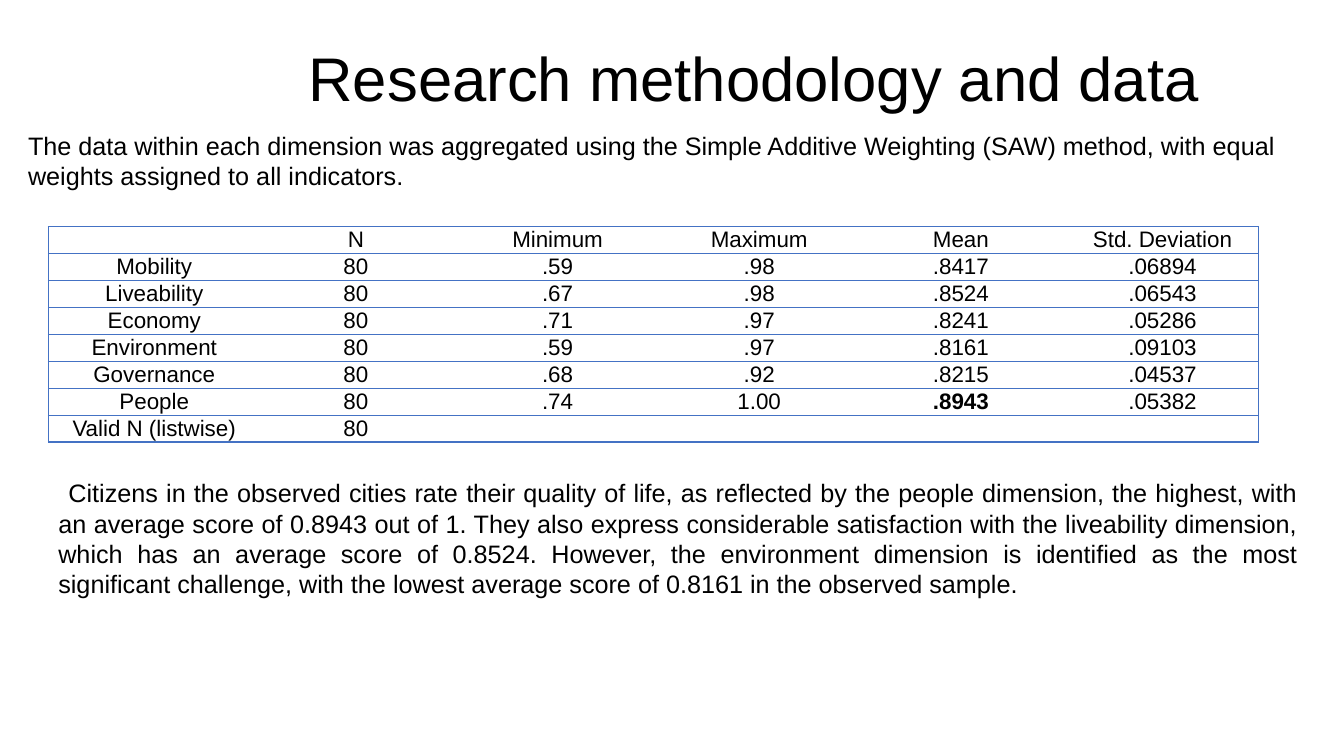
import pptx
import pptx.dml.color
import pptx.enum.text
import pptx.oxml.ns
import pptx.util
from lxml import etree

PX = 9144
FONT = "Arial"
BLACK = "000000"
WHITE = "FFFFFF"
RULE_BLUE = "4472C4"
ALIGN = pptx.enum.text.PP_ALIGN
ANCHOR = pptx.enum.text.MSO_ANCHOR
AUTO_SIZE = pptx.enum.text.MSO_AUTO_SIZE
qn = pptx.oxml.ns.qn

TITLE = "Research methodology and data"
METHOD = (
    "The data within each dimension was aggregated using the Simple Additive "
    "Weighting (SAW) method, with equal weights assigned to all indicators."
)
FINDINGS = (
    "Citizens in the observed cities rate their quality of life, as reflected by "
    "the people dimension, the highest, with an average score of 0.8943 out of 1. "
    "They also express considerable satisfaction with the liveability dimension, "
    "which has an average score of 0.8524. However, the environment dimension is "
    "identified as the most significant challenge, with the lowest average score "
    "of 0.8161 in the observed sample."
)
STATISTICS = [
    ("", "N", "Minimum", "Maximum", "Mean", "Std. Deviation"),
    ("Mobility", "80", ".59", ".98", ".8417", ".06894"),
    ("Liveability", "80", ".67", ".98", ".8524", ".06543"),
    ("Economy", "80", ".71", ".97", ".8241", ".05286"),
    ("Environment", "80", ".59", ".97", ".8161", ".09103"),
    ("Governance", "80", ".68", ".92", ".8215", ".04537"),
    ("People", "80", ".74", "1.00", ".8943", ".05382"),
    ("Valid N (listwise)", "80", "", "", "", ""),
]
HIGHEST_MEAN = ".8943"


def px(length):
    return pptx.util.Emu(length * PX)


def color(hex_string):
    return pptx.dml.color.RGBColor.from_string(hex_string)


def write_text(frame, text, size=18, bold=False, align=ALIGN.LEFT, indent=0, spacing=None):
    paragraph = frame.paragraphs[0]
    paragraph.alignment = align
    paragraph.line_spacing = spacing
    if indent:
        properties = paragraph._p.get_or_add_pPr()
        properties.set("marL", "0")
        properties.set("indent", str(px(indent)))
    if not text:
        etree.SubElement(paragraph._p, qn("a:endParaRPr"), sz=str(size * 100))
        return
    run = paragraph.add_run()
    run.text = text
    run.font.name = FONT
    run.font.size = pptx.util.Pt(size)
    run.font.bold = bold
    run.font.color.rgb = color(BLACK)


def set_margins(target, side, vertical):
    target.margin_left = target.margin_right = px(side)
    target.margin_top = target.margin_bottom = px(vertical)


def place_title(title, left, top, width, height):
    title.left, title.top, title.width, title.height = map(px, (left, top, width, height))
    frame = title.text_frame
    frame.word_wrap = True
    frame.auto_size = AUTO_SIZE.NONE
    frame.vertical_anchor = ANCHOR.MIDDLE
    set_margins(frame, 0, 0)
    write_text(frame, TITLE, size=44, spacing=0.9)


def add_passage(slide, text, left, top, width, height, **text_format):
    frame = slide.shapes.add_textbox(*map(px, (left, top, width, height))).text_frame
    frame.word_wrap = True
    frame.auto_size = AUTO_SIZE.SHAPE_TO_FIT_TEXT
    write_text(frame, text, **text_format)


def add_border(cell, side, visible):
    line = etree.SubElement(
        cell._tc.get_or_add_tcPr(), qn("a:ln" + side), w=str(pptx.util.Pt(1))
    )
    if visible:
        fill = etree.SubElement(line, qn("a:solidFill"))
        etree.SubElement(fill, qn("a:srgbClr"), val=RULE_BLUE)
    else:
        etree.SubElement(line, qn("a:noFill"))


def add_statistics(slide, left, top, width, height):
    columns = len(STATISTICS[0])
    table = slide.shapes.add_table(
        len(STATISTICS), columns, *map(px, (left, top, width, height))
    ).table
    table.first_row = False
    table.horz_banding = False
    for row, values in enumerate(STATISTICS):
        for column, value in enumerate(values):
            cell = table.cell(row, column)
            cell.vertical_anchor = ANCHOR.MIDDLE
            set_margins(cell, 7, 0)
            add_border(cell, "L", column == 0)
            add_border(cell, "R", column == columns - 1)
            add_border(cell, "T", True)
            add_border(cell, "B", True)
            cell.fill.solid()
            cell.fill.fore_color.rgb = color(WHITE)
            write_text(cell.text_frame, value, size=16, bold=value == HIGHEST_MEAN,
                       align=ALIGN.CENTER, indent=10)


def main():
    presentation = pptx.Presentation()
    presentation.slide_width = px(1333)
    presentation.slide_height = px(750)
    slide = presentation.slides.add_slide(presentation.slide_layouts[5])
    place_title(slide.shapes.title, 306, 67, 931, 27)
    add_passage(slide, METHOD, 18, 124, 1293, 101)
    add_statistics(slide, 48, 225, 1200, 213)
    add_passage(slide, FINDINGS, 48, 469, 1249, 131, align=ALIGN.JUSTIFY, indent=10)
    presentation.save("out.pptx")


if __name__ == "__main__":
    main()
